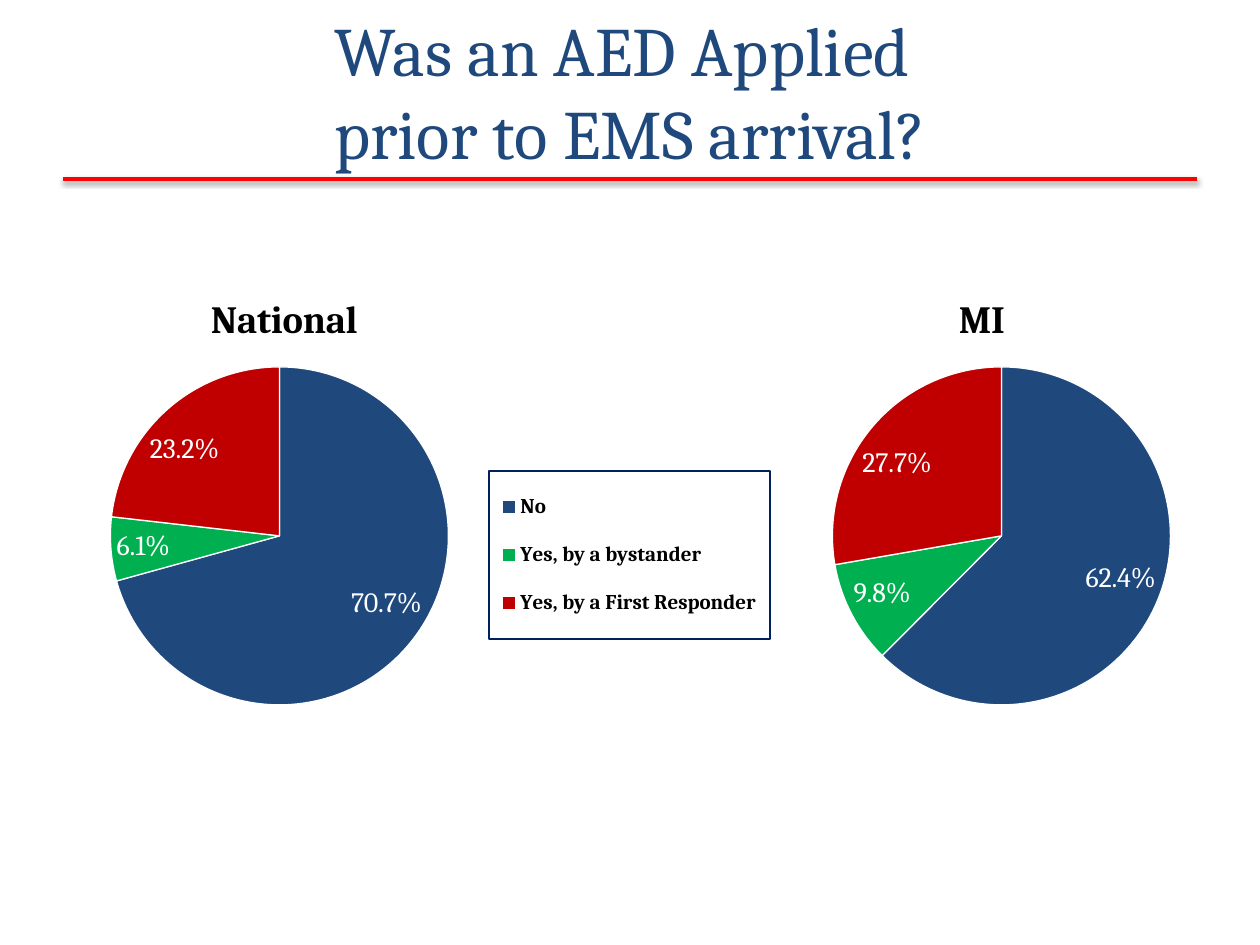
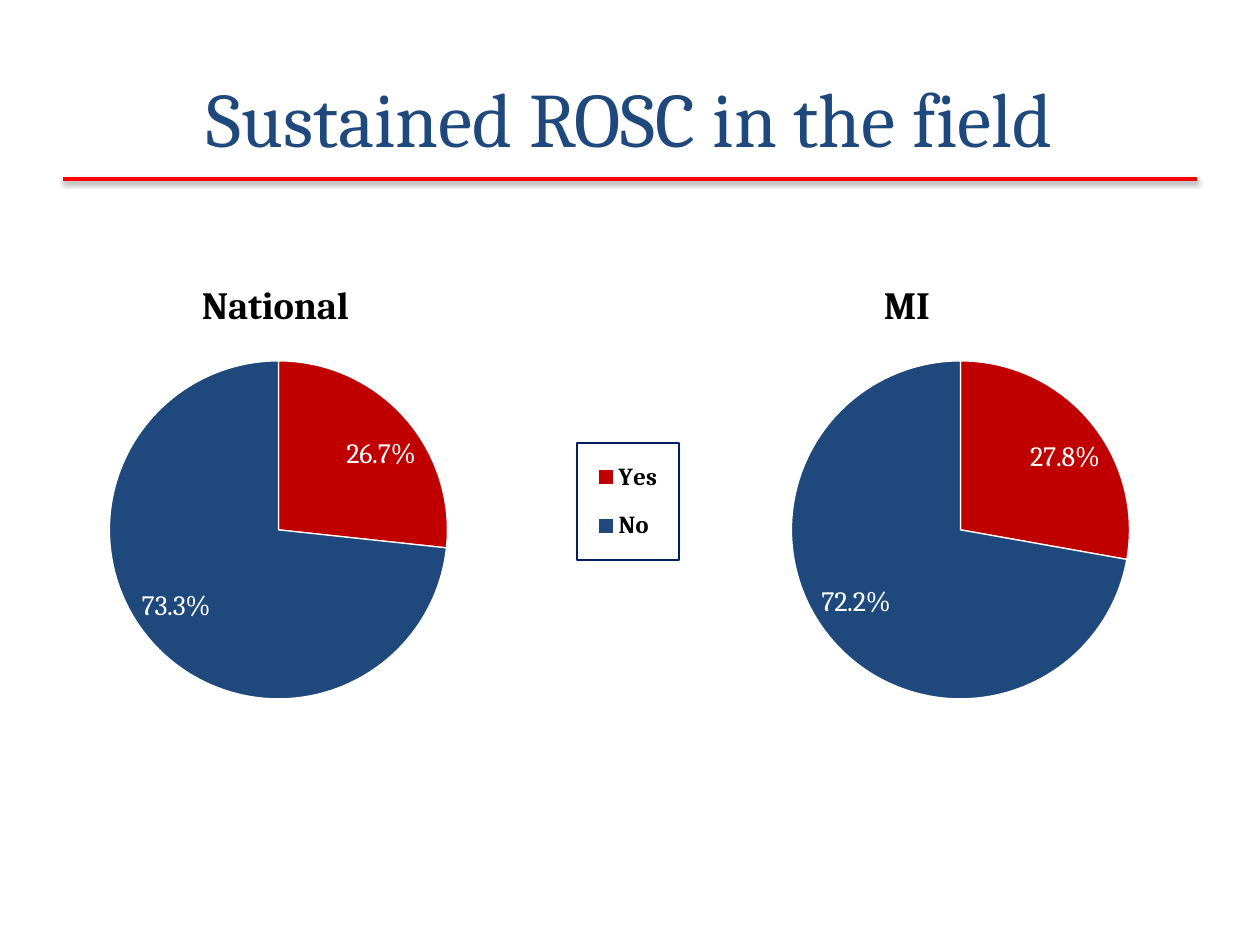
from lxml.etree import SubElement
from pptx import Presentation
from pptx.chart.data import CategoryChartData
from pptx.dml.color import RGBColor
from pptx.enum.chart import XL_CHART_TYPE, XL_LABEL_POSITION, XL_LEGEND_POSITION
from pptx.enum.shapes import MSO_CONNECTOR
from pptx.enum.text import MSO_ANCHOR, MSO_AUTO_SIZE, PP_ALIGN
from pptx.oxml import parse_xml
from pptx.oxml.ns import nsdecls, qn
from pptx.util import Emu, Pt

PX = 914400 / 126
HUES = {
    "navy": "1F497D", "green": "00B050", "red": "C00000", "rule": "FF0000",
    "frame": "002060", "ink": "000000", "paper": "FFFFFF",
}
RGB = {name: RGBColor.from_string(code) for name, code in HUES.items()}
FACE = "Cambria"

# Boxes are left, top, width, height; those inside a chart count from its corner.
SLIDES = [
    {
        "title": "Was an AED Applied \vprior to EMS arrival?", "size": 39.6, "top": 11,
        "cats": {"No": "navy", "Yes, by a bystander": "green",
                 "Yes, by a First Responder": "red"},
        "area": (787, 624), "chart_top": 197, "plot": (75, 170, 431, 338),
        "legend": (500, 274, 281, 168), "key_size": 12,
        "pies": [("National", -11, (215, 91), (70.7, 6.1, 23.2)),
                 ("MI", 711, (241, 91), (62.4, 9.8, 27.7))],
    },
    {
        "title": "Sustained ROSC in the field", "size": 44, "top": 38,
        "cats": {"Yes": "red", "No": "navy"},
        "area": (684, 624), "chart_top": 189, "plot": (70, 172, 375, 338),
        "legend": (556, 254, 102, 117), "key_size": 14,
        "pies": [("National", 21, (174, 85), (26.7, 73.3)),
                 ("MI", 703, (174, 85), (27.8, 72.2))],
    },
]


def style(font, size, hue, bold=False):
    for key, val in {"name": FACE, "size": Pt(size), "bold": bold}.items():
        setattr(font, key, val)
    font.color.rgb = RGB[hue]


def place(part, index, box, area):
    """Fix a chart part at a box, given in px within the chart area."""
    for old in part.findall(qn("c:layout")):
        part.remove(old)
    layout = parse_xml(f"<c:layout {nsdecls('c')}><c:manualLayout/></c:layout>")
    manual = layout[0]
    if part.tag == qn("c:plotArea"):
        SubElement(manual, qn("c:layoutTarget")).set("val", "inner")
    for mode in ("xMode", "yMode"):
        SubElement(manual, qn(f"c:{mode}")).set("val", "edge")
    for key, val, full in zip("xywh", box, area * 2):
        SubElement(manual, qn(f"c:{key}")).set("val", f"{val / full:.4f}")
    part.insert(index, layout)


deck = Presentation()
deck.slide_width, deck.slide_height = Emu(round(1260 * PX)), Emu(round(945 * PX))
base = deck.slide_layouts[5]

for page, info in enumerate(SLIDES):
    slide = deck.slides.add_slide(base)

    if page == 0:
        # The red rule belongs to the layout, so both slides show it.
        ends = [Emu(round(n * PX)) for n in (63, 179, 1197, 179)]
        rule = slide.shapes.add_connector(MSO_CONNECTOR.STRAIGHT, *ends)
        rule.line.color.rgb = RGB["rule"]
        rule.line.width = Pt(2)
        rule.element.spPr.append(parse_xml(
            f'<a:effectLst {nsdecls("a")}><a:outerShdw blurRad="{Pt(3.1)}" '
            f'dist="{Pt(1.6)}" dir="5400000" rotWithShape="0">'
            f'<a:srgbClr val="{HUES["ink"]}"><a:alpha val="38000"/></a:srgbClr>'
            '</a:outerShdw></a:effectLst>'))
        base.shapes.element.append(rule.element)

    title = slide.shapes.title
    spots = zip(("left", "top", "width", "height"), (63, info["top"], 1134, 158))
    for key, val in spots:
        setattr(title, key, Emu(round(val * PX)))
    frame = title.text_frame
    frame.text = info["title"]
    frame.auto_size = MSO_AUTO_SIZE.NONE
    frame.vertical_anchor = MSO_ANCHOR.MIDDLE
    frame.paragraphs[0].alignment = PP_ALIGN.CENTER
    for run in frame.paragraphs[0].runs:
        style(run.font, info["size"], "navy")

    area = info["area"]
    for order, (name, left, spot, vals) in enumerate(info["pies"]):
        data = CategoryChartData()
        data.categories = list(info["cats"])
        data.add_series("Series 1", vals)
        box = [Emu(round(n * PX)) for n in (left, info["chart_top"], *area)]
        chart = slide.shapes.add_chart(XL_CHART_TYPE.PIE, *box, data).chart
        style(chart.font, 18, "ink")

        chart.has_title = True
        head = chart.chart_title.text_frame
        head.text = name
        style(head.paragraphs[0].runs[0].font, 22, "ink", True)
        place(chart.element.xpath(".//c:chart/c:title")[0], 1, spot, area)
        place(chart.element.xpath(".//c:plotArea")[0], 0, info["plot"], area)

        plot = chart.plots[0]
        plot.vary_by_categories = True
        for index, hue in enumerate(info["cats"].values()):
            look = plot.series[0].points[index].format
            look.fill.solid()
            look.fill.fore_color.rgb = RGB[hue]
            look.line.color.rgb = RGB["paper"]
            look.line.width = Pt(0.75)

        plot.has_data_labels = True
        labels = plot.data_labels
        formats = {
            "show_value": True, "show_percentage": False,
            "number_format": '0.0"%"', "number_format_is_linked": False,
            "position": XL_LABEL_POSITION.BEST_FIT,
        }
        for key, val in formats.items():
            setattr(labels, key, val)
        style(labels.font, 16, "paper")

        chart.has_legend = order == 0
        if chart.has_legend:
            chart.legend.position = XL_LEGEND_POSITION.RIGHT
            chart.legend.include_in_layout = False
            style(chart.legend.font, info["key_size"], "ink", True)
            legend = chart.element.xpath(".//c:legend")[0]
            place(legend, 1, info["legend"], area)
            legend.find(qn("c:overlay")).addnext(parse_xml(
                f'<c:spPr {nsdecls("c", "a")}><a:ln w="{Pt(1)}"><a:solidFill>'
                f'<a:srgbClr val="{HUES["frame"]}"/></a:solidFill></a:ln></c:spPr>'))

deck.save("out.pptx")
